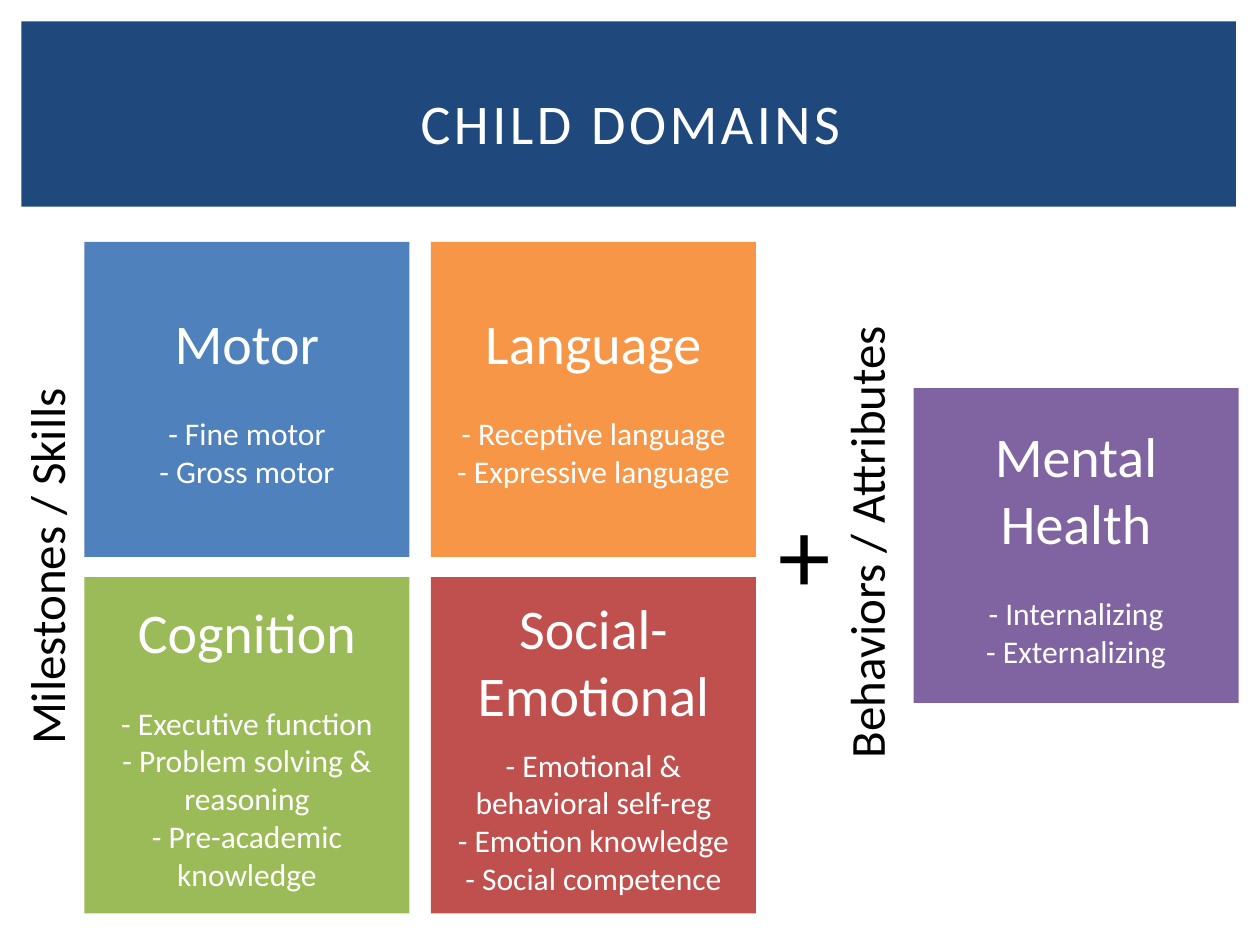
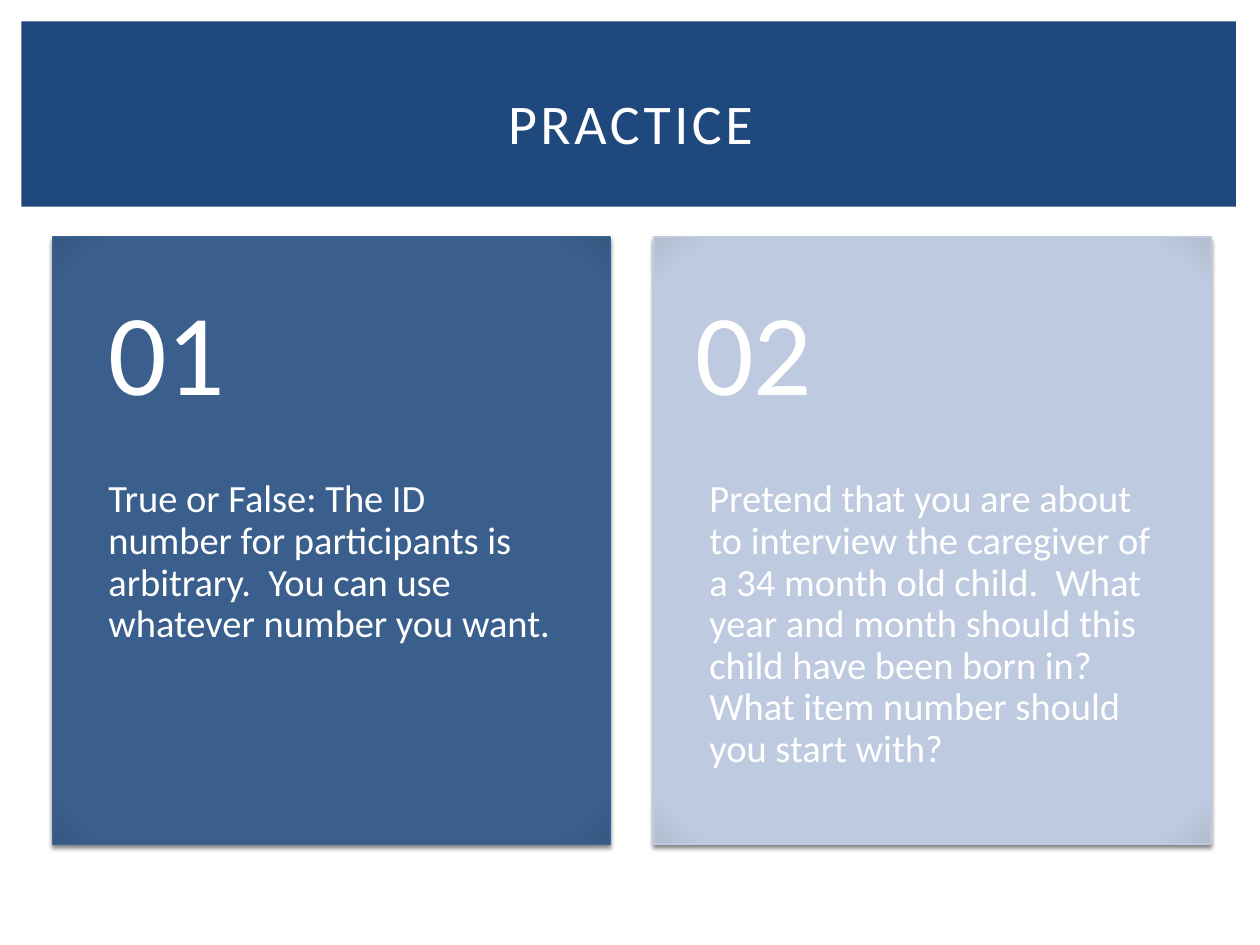
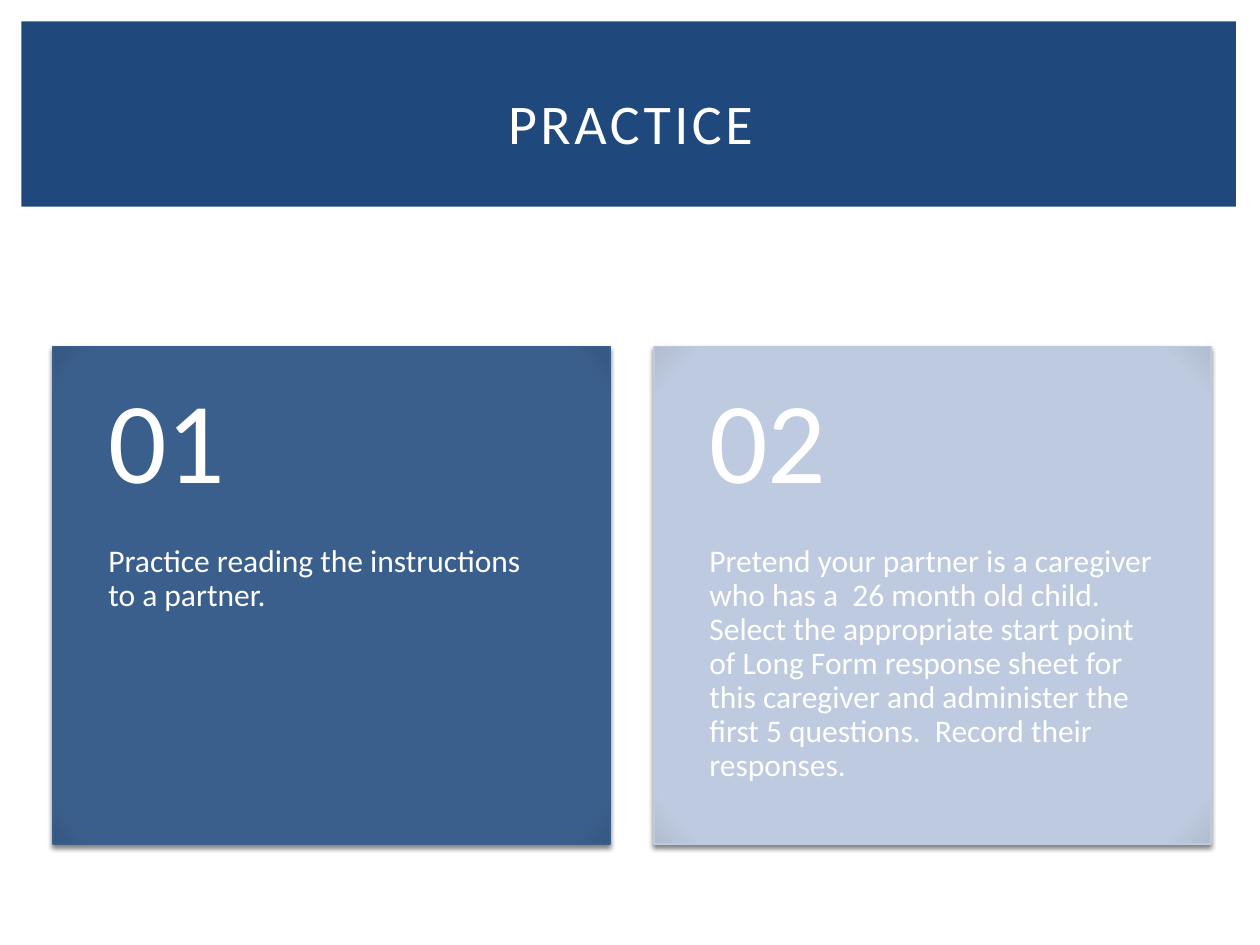
from pptx import Presentation
from pptx.dml.color import RGBColor
from pptx.enum.shapes import MSO_SHAPE
from pptx.enum.text import MSO_ANCHOR, MSO_AUTO_SIZE, PP_ALIGN
from pptx.oxml import parse_xml
from pptx.oxml.ns import nsdecls, qn
from pptx.util import Inches, Pt

RECTANGLE = MSO_SHAPE.RECTANGLE
TOP, MIDDLE = MSO_ANCHOR.TOP, MSO_ANCHOR.MIDDLE
LEFT, CENTER = PP_ALIGN.LEFT, PP_ALIGN.CENTER
GROW = MSO_AUTO_SIZE.SHAPE_TO_FIT_TEXT

FONT = "Calibri"
WHITE, BLACK, NAVY = "FFFFFF", "000000", "1F497D"
PANEL_COLORS = [("3A5F8C", "365982"), ("BECADF", "B1BCCF")]
PANEL_LEFTS = [0.42, 5.19]
PANEL_WIDTH, PANEL_BOTTOM, NUMBER_SHARE = 4.42, 6.7, 0.4
DEFAULT_INSETS = (0.1, 0.05, 0.1, 0.05)


def rgb(color):
    return RGBColor.from_string(color)


def write(frame, text, size=18, color=WHITE, align=LEFT, before=0, leading=None, tracking=0):
    paragraph = frame.paragraphs[0]
    if paragraph.runs:
        paragraph = frame.add_paragraph()
    paragraph.alignment = align
    paragraph.space_before = Pt(before)
    if leading:
        paragraph.line_spacing = leading
    run = paragraph.add_run()
    run.text = text
    run.font.name = FONT
    run.font.size = Pt(size)
    run.font.color.rgb = rgb(color)
    if tracking:
        run.font._element.set("spc", str(tracking * 100))


class Deck:
    """Holds the shared style and the slide being built."""

    def __init__(self):
        self.presentation = Presentation()
        self.presentation.slide_width = Inches(10)
        self.presentation.slide_height = Inches(7.5)
        self.slide = None

    def start(self, title):
        self.slide = self.presentation.slides.add_slide(self.presentation.slide_layouts[6])
        self.block(0.17, 0.17, 9.64, 1.47, NAVY)
        self.text(0.42, 0.39, 9.17, 1.15, title, anchor=MIDDLE, size=32, align=CENTER, tracking=2)

    def block(self, left, top, width, height, color):
        block = self.slide.shapes.add_shape(
            RECTANGLE, Inches(left), Inches(top), Inches(width), Inches(height))
        block.shadow.inherit = False
        block.fill.solid()
        block.fill.fore_color.rgb = rgb(color)
        block.line.fill.background()
        return block

    def text(self, left, top, width, height, text, anchor=TOP, insets=DEFAULT_INSETS,
             wrap=True, grow=False, rotation=0, **style):
        box = self.slide.shapes.add_textbox(
            Inches(left), Inches(top), Inches(width), Inches(height))
        box.rotation = rotation
        frame = box.text_frame
        frame.word_wrap = wrap
        if grow:
            frame.auto_size = GROW
        frame.vertical_anchor = anchor
        (frame.margin_left, frame.margin_top,
         frame.margin_right, frame.margin_bottom) = map(Inches, insets)
        write(frame, text, **style)

    def domain(self, left, top, height, color, name, skills, gap=22):
        frame = self.block(left, top, 2.58, height, color).text_frame
        frame.word_wrap = True
        frame.vertical_anchor = MIDDLE
        write(frame, name, size=32, align=CENTER)
        for index, skill in enumerate(skills):
            write(frame, f"- {skill}", align=CENTER, before=0 if index else gap)

    def label(self, left, top, width, height, text, size=28, rotation=0):
        self.text(left, top, width, height, text, wrap=False, grow=True,
                  rotation=rotation, size=size, color=BLACK)

    def backdrop(self, left, top, height, color, edge):
        backdrop = self.block(left, top, PANEL_WIDTH, height, color)
        backdrop.line.color.rgb = rgb(color)
        backdrop.line.width = Pt(0.79)
        properties = backdrop._element.spPr
        stops = "".join(
            f'<a:gs pos="{position}000"><a:srgbClr val="{shade}"/></a:gs>'
            for position, shade in [(0, color), (90, color), (100, edge)])
        properties.replace(properties.find(qn("a:solidFill")), parse_xml(
            f'<a:gradFill {nsdecls("a")} rotWithShape="1"><a:gsLst>{stops}</a:gsLst>'
            '<a:path path="circle"><a:fillToRect l="100000" t="100000" r="100000" b="100000"/>'
            '</a:path></a:gradFill>'))
        properties.find(qn("a:effectLst")).append(parse_xml(
            f'<a:outerShdw {nsdecls("a")} blurRad="{Pt(2.5)}" dist="{Pt(2)}" dir="5400000"'
            ' rotWithShape="0"><a:srgbClr val="000000"><a:alpha val="50000"/></a:srgbClr>'
            '</a:outerShdw>'))

    def panel(self, column, top, task, size, numbered=True):
        left = PANEL_LEFTS[column]
        height = PANEL_BOTTOM - top
        number_height = height * NUMBER_SHARE
        self.backdrop(left, top, height, *PANEL_COLORS[column])
        self.text(left, top + number_height, PANEL_WIDTH, height - number_height, task,
                  insets=(0.44, 0, 0.44, 0.36), size=size, leading=0.9)
        if numbered:
            self.text(left, top, PANEL_WIDTH, number_height, f"{column + 1:02}", anchor=MIDDLE,
                      insets=(0.44, 0.18, 0.44, 0.18), size=66, leading=0.9)


def build_domains(deck):
    deck.start("CHILD DOMAINS")
    deck.domain(0.67, 1.92, 2.5, "4F81BD", "Motor", ["Fine motor", "Gross motor"])
    deck.domain(3.42, 1.92, 2.5, "F79646", "Language",
                ["Receptive language", "Expressive language"])
    deck.domain(0.67, 4.58, 2.67, "9BBB59", "Cognition",
                ["Executive function", "Problem solving & reasoning", "Pre-academic knowledge"])
    deck.domain(3.42, 4.58, 2.67, "C0504D", "Social-Emotional",
                ["Emotional & behavioral self-reg", "Emotion knowledge", "Social competence"],
                gap=10)
    deck.domain(7.25, 3.08, 2.5, "8064A2", "Mental Health", ["Internalizing", "Externalizing"])
    deck.label(-1.17, 4.19, 3.07, 0.57, "Milestones / Skills", rotation=270)
    deck.label(5.02, 3.98, 3.7, 0.57, "Behaviors / Attributes", rotation=270)
    deck.label(6.08, 3.83, 0.62, 1.11, "+", size=60)


def build_question_practice(deck):
    deck.start("PRACTICE")
    deck.panel(0, 1.88, "True or False: The ID number for participants is arbitrary.  "
               "You can use whatever number you want.", 22)
    deck.panel(1, 1.88, "Pretend that you are about to interview the caregiver of a 34 month old "
               "child.  What year and month should this child have been born in? "
               "What item number should you start with?", 22, numbered=False)
    deck.text(5.42, 2.17, 2.83, 1.21, "02", grow=True, size=66)


def build_partner_practice(deck):
    deck.start("PRACTICE")
    deck.panel(0, 2.75, "Practice reading the instructions to a partner.", 18)
    deck.panel(1, 2.75, "Pretend your partner is a caregiver who has a  26 month old child. "
               "Select the appropriate start point of Long Form response sheet for this "
               "caregiver and administer the first 5 questions.  Record their responses.", 18)


def main():
    deck = Deck()
    build_domains(deck)
    build_question_practice(deck)
    build_partner_practice(deck)
    deck.presentation.save("out.pptx")


if __name__ == "__main__":
    main()
